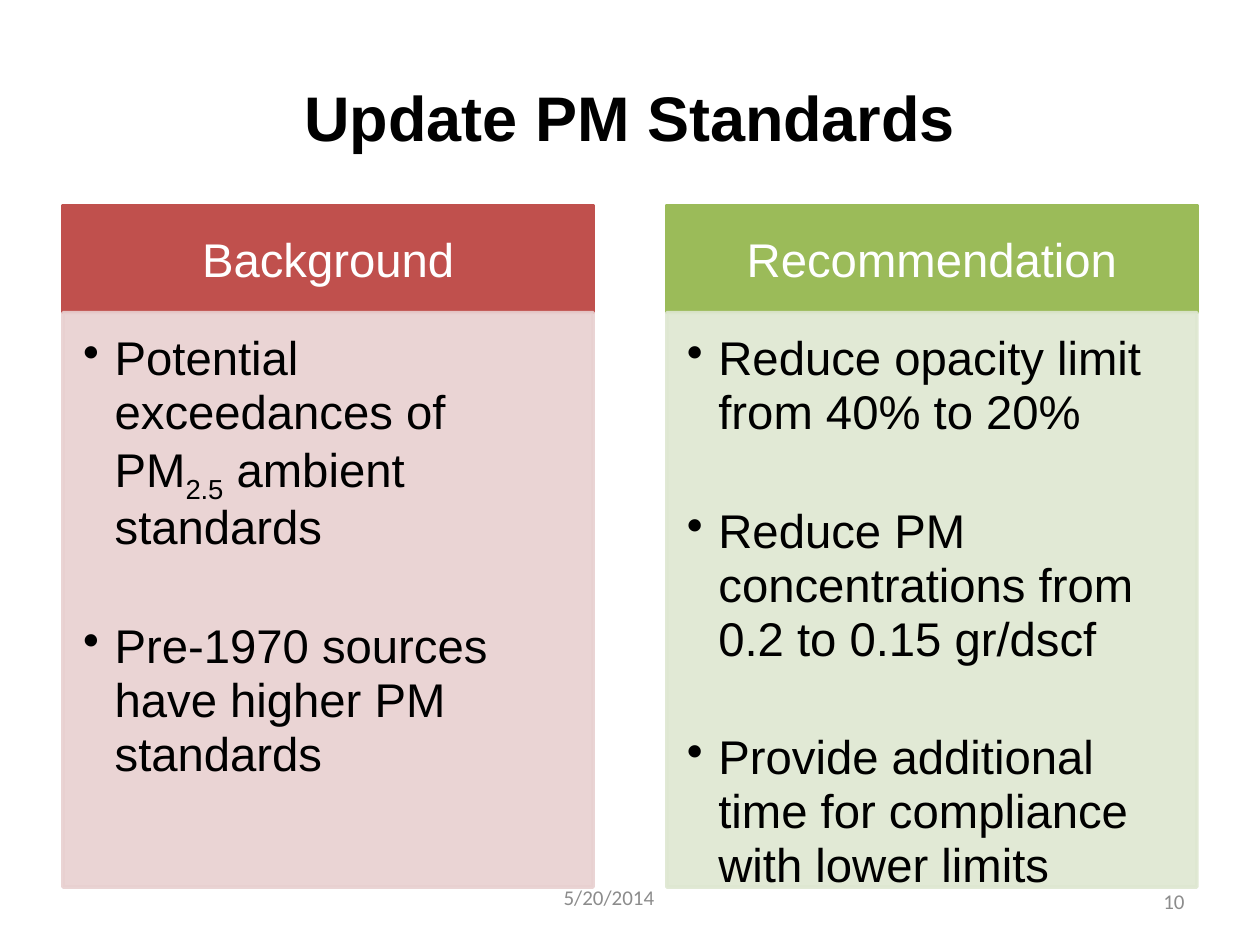
import pptx
import pptx.util
import pptx.dml.color
import pptx.enum.shapes
import pptx.enum.text
import pptx.oxml
import pptx.oxml.ns

Pt = pptx.util.Pt
RGB = pptx.dml.color.RGBColor
ALIGN = pptx.enum.text.PP_ALIGN
ANCHOR = pptx.enum.text.MSO_ANCHOR

RED = RGB(0xC0, 0x50, 0x4D)
PINK = RGB(0xE8, 0xD0, 0xD0)
GREEN = RGB(0x9B, 0xBB, 0x59)
MINT = RGB(0xDE, 0xE7, 0xD1)
BLACK = RGB(0, 0, 0)
WHITE = RGB(0xFF, 0xFF, 0xFF)
GRAY = RGB(0x8C, 0x8C, 0x8C)

HEAD = 61.2
LEFT = [
    [("Potential exceedances of PM", False), ("2.5", True), (" ambient standards", False)],
    [("Pre-1970 sources have higher PM standards", False)],
]
RIGHT = [
    [("Reduce opacity limit from 40% to 20%", False)],
    [("Reduce PM concentrations from 0.2 to 0.15 gr/dscf", False)],
    [("Provide additional time for compliance with lower limits", False)],
]


def style(para, size, color, face="Arial", bold=False):
    font = para.font
    font.name, font.size, font.bold = face, Pt(size), bold
    font.color.rgb = color


def label(slide, box, text, align, size, color, face="Arial", bold=False):
    frame = slide.shapes.add_textbox(*map(Pt, box)).text_frame
    frame.word_wrap = True
    frame.vertical_anchor = ANCHOR.MIDDLE
    para = frame.paragraphs[0]
    para.text, para.alignment = text, align
    style(para, size, color, face, bold)


def panel(slide, box, color, pads):
    shape = slide.shapes.add_shape(pptx.enum.shapes.MSO_SHAPE.RECTANGLE, *map(Pt, box))
    shape.shadow.inherit = False
    shape.fill.solid()
    shape.fill.fore_color.rgb = color
    shape.line.color.rgb = color
    shape.line.width = Pt(2)
    frame = shape.text_frame
    frame.word_wrap = True
    frame.margin_left, frame.margin_top, frame.margin_right, frame.margin_bottom = map(Pt, pads)
    return shape


def fade(shape):
    for tone in shape._element.spPr.iter(pptx.oxml.ns.qn("a:srgbClr")):
        tone.append(pptx.oxml.parse_xml(
            f'<a:alpha {pptx.oxml.ns.nsdecls("a")} val="90000"/>'))


def bullet(para):
    props = para._p.get_or_add_pPr()
    props.set("marL", str(Pt(18)))
    props.set("indent", str(-Pt(18)))
    props.append(pptx.oxml.parse_xml(
        f'<a:buChar {pptx.oxml.ns.nsdecls("a")} char="•"/>'))


def column(slide, box, title, items, dark, pale):
    left, top, width, height = box
    head = panel(slide, (left, top, width, HEAD), dark, (15, 8.5, 15, 8.5))
    head.text_frame.vertical_anchor = ANCHOR.MIDDLE
    para = head.text_frame.paragraphs[0]
    para.text, para.alignment = title, ALIGN.CENTER
    style(para, 27, WHITE)

    body = panel(slide, (left, top + HEAD, width, height - HEAD), pale, (11.5, 11.5, 15, 17))
    fade(body)
    frame = body.text_frame
    frame.vertical_anchor = ANCHOR.TOP
    for index, item in enumerate(items):
        para = frame.add_paragraph() if index else frame.paragraphs[0]
        para.alignment = ALIGN.LEFT
        para.line_spacing = 0.95
        if index:
            para.space_before = Pt(37)
        bullet(para)
        style(para, 27, BLACK)
        for text, low in item:
            run = para.add_run()
            run.text = text
            if low:
                run._r.get_or_add_rPr().set("baseline", "-25000")


def footer(slide, box):
    left, top, width, height = box
    label(slide, (left + 228, top, 168, height), "5/20/2014", ALIGN.CENTER, 12, GRAY, "Calibri")
    label(slide, (left + width - 168, top + 2.5, 168, height), "10", ALIGN.RIGHT, 12, GRAY, "Calibri")


def main():
    deck = pptx.Presentation()
    deck.slide_width, deck.slide_height = Pt(720), Pt(540)
    slide = deck.slides.add_slide(deck.slide_layouts[6])
    column(slide, (36, 117.4, 303, 389.5), "Background", LEFT, RED, PINK)
    column(slide, (381, 117.4, 303, 389.5), "Recommendation", RIGHT, GREEN, MINT)
    footer(slide, (36, 498, 648, 29))
    label(slide, (36, 21.6, 648, 90), "Update PM Standards", ALIGN.CENTER, 36, BLACK, bold=True)
    deck.save("out.pptx")


if __name__ == "__main__":
    main()
